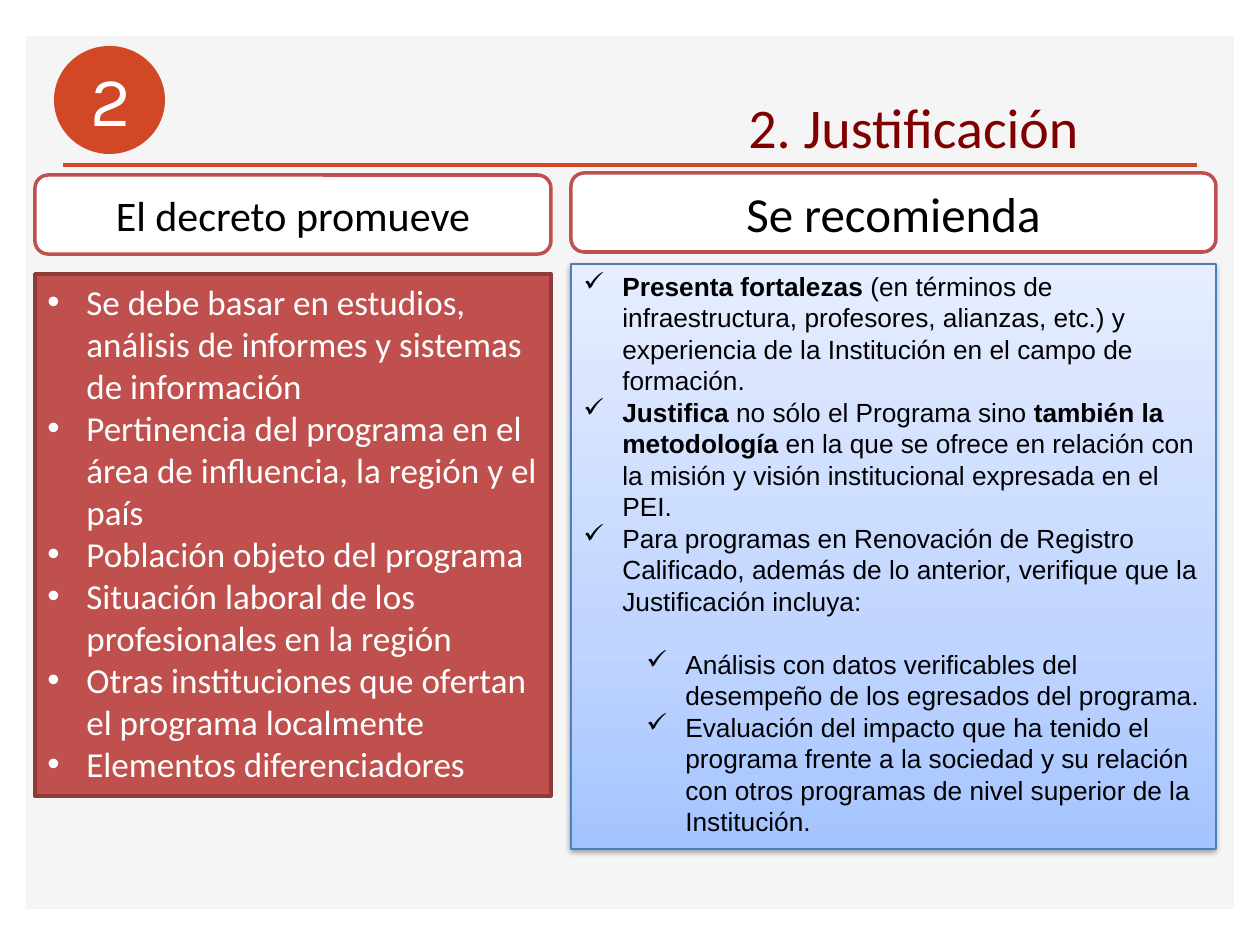
from copy import deepcopy

from lxml.etree import SubElement
from pptx import Presentation
from pptx.dml.color import RGBColor
from pptx.enum.shapes import MSO_CONNECTOR as Connector, MSO_SHAPE as Shape
from pptx.enum.text import MSO_ANCHOR as Anchor, MSO_AUTO_SIZE as AutoSize, PP_ALIGN as Align
from pptx.oxml.ns import qn
from pptx.util import Emu, Pt

SCALE = 914400 / 126  # EMU per px
INDENT = 39  # px, hanging indent of every bullet
SUB_INDENT = 102

THEME = {
    "page": "FFFFFF", "panel": "F5F5F5", "accent": "D24726", "title": "800000",
    "red": "C0504D", "red_edge": "8E3B39", "blue_edge": "4B7EBC",
    "light": "FFFFFF", "dark": "000000",
    "gradient": [(0, "A4C4FF"), (0.35, "BFD4FF"), (1, "E6EEFF")],
    "number_size": 40, "title_size": 32, "left_heading_size": 24,
    "right_heading_size": 28, "left_size": 20, "right_size": 15,
    "font": "Calibri", "number_font": "Karla", "right_font": "Arial",
}


def add_box(shapes, kind, box, fill=None, edge=None, width=2):
    shape = shapes.add_shape(kind, *(Emu(round(px * SCALE)) for px in box))
    shape.shadow.inherit = False
    if fill:
        shape.fill.solid()
        shape.fill.fore_color.rgb = RGBColor.from_string(fill)
    if edge:
        shape.line.color.rgb = RGBColor.from_string(edge)
        shape.line.width = Pt(width)
    else:
        shape.line.fill.background()
    return shape


def style_font(font, size, color, name=THEME["font"]):
    font.size, font.name = Pt(size), name
    font.color.rgb = RGBColor.from_string(color)


presentation = Presentation()
presentation.slide_width = Emu(round(1260 * SCALE))
presentation.slide_height = Emu(round(945 * SCALE))
slide = presentation.slides.add_slide(presentation.slide_layouts[6])
slide.background.fill.solid()
slide.background.fill.fore_color.rgb = RGBColor.from_string(THEME["page"])

# Background panel and title rule
add_box(slide.shapes, Shape.RECTANGLE, (26, 36, 1208, 873), THEME["panel"])
rule = slide.shapes.add_connector(
    Connector.STRAIGHT, *(Emu(round(px * SCALE)) for px in (63, 165, 1197, 165)))
rule.line.color.rgb = RGBColor.from_string(THEME["accent"])
rule.line.width = Pt(2)
SubElement(rule._element.spPr, qn("a:effectLst"))

# Number badge
badge = slide.shapes.add_group_shape()
add_box(badge.shapes, Shape.OVAL, (54, 46, 111, 108), THEME["accent"])
number = badge.shapes.add_textbox(*(Emu(round(px * SCALE)) for px in (35, 50, 151, 97)))
number.text_frame.word_wrap = True
number.text_frame.text = "2"
number.text_frame.paragraphs[0].alignment = Align.CENTER
style_font(number.text_frame.paragraphs[0].runs[0].font,
           THEME["number_size"], THEME["light"], THEME["number_font"])

# Title
title = slide.shapes.add_textbox(*(Emu(round(px * SCALE)) for px in (736, 86, 360, 81)))
title.text_frame.word_wrap = False
title.text_frame.text = "2. Justificación"
style_font(title.text_frame.paragraphs[0].runs[0].font, THEME["title_size"], THEME["title"])

# Column bodies
left_body = add_box(slide.shapes, Shape.RECTANGLE, (35, 274, 516, 522),
                    THEME["red"], THEME["red_edge"])
right_body = add_box(slide.shapes, Shape.RECTANGLE, (571, 264, 645, 585),
                     edge=THEME["blue_edge"], width=0.75)

# Vertical gradient and soft shadow of the right body
right_body.fill.gradient()
right_body.fill.gradient_angle = 90
stop_list = right_body._element.spPr.find(".//" + qn("a:gsLst"))
stop_list.insert(1, deepcopy(stop_list[0]))
for stop, (position, color) in zip(right_body.fill.gradient_stops, THEME["gradient"]):
    stop.position = position
    stop.color.rgb = RGBColor.from_string(color)
effects = right_body._element.spPr.find(qn("a:effectLst"))
shadow = SubElement(effects, qn("a:outerShdw"), blurRad=str(Pt(3.1)), dist=str(Pt(1.6)),
                    dir="5400000", rotWithShape="0")
shadow_color = SubElement(shadow, qn("a:srgbClr"), val=THEME["dark"])
SubElement(shadow_color, qn("a:alpha"), val="38000")

# Bullets: (level, runs); every second run, from the first, is bold
left_items = [(0, ["", text]) for text in (
    "Se debe basar en estudios, análisis de informes y sistemas de información",
    "Pertinencia del programa en el área de influencia, la región y el país",
    "Población objeto del programa",
    "Situación laboral de los profesionales en la región",
    "Otras instituciones que ofertan el programa localmente",
    "Elementos diferenciadores",
)]
right_items = [
    (0, ["Presenta fortalezas ",
         "(en términos de infraestructura, profesores, alianzas, etc.) y experiencia "
         "de la Institución en el campo de formación."]),
    (0, ["Justifica ", "no sólo el Programa sino ", "también la metodología ",
         "en la que se ofrece en relación con la misión y visión institucional "
         "expresada en el PEI."]),
    (0, ["", "Para programas en Renovación de Registro Calificado, además de lo anterior, "
             "verifique que la Justificación incluya:"]),
    (1, ["", "Análisis con datos verificables del desempeño de los egresados del programa."]),
    (1, ["", "Evaluación del impacto que ha tenido el programa frente a la sociedad y su "
             "relación con otros programas de nivel superior de la Institución."]),
]
for body, items, bullet, bullet_font, size, color, font_name in (
    (left_body, left_items, "•", "Arial", THEME["left_size"], THEME["light"], THEME["font"]),
    (right_body, right_items, "✓", None, THEME["right_size"], THEME["dark"],
     THEME["right_font"]),
):
    frame = body.text_frame
    frame.word_wrap = True
    frame.auto_size = AutoSize.SHAPE_TO_FIT_TEXT
    frame.vertical_anchor = Anchor.TOP
    previous_level = 0
    for index, (level, texts) in enumerate(items):
        paragraph = frame.add_paragraph() if index else frame.paragraphs[0]
        paragraph.alignment = Align.LEFT
        paragraph.level = level
        if level > previous_level:
            paragraph.space_before = Pt(18)
        previous_level = level
        properties = paragraph._p.get_or_add_pPr()
        properties.set("marL", str(round((SUB_INDENT if level else INDENT) * SCALE)))
        properties.set("indent", str(round(-INDENT * SCALE)))
        if bullet_font:
            SubElement(properties, qn("a:buFont"), typeface=bullet_font)
        SubElement(properties, qn("a:buChar"), char=bullet)
        for position, text in enumerate(texts):
            if text:
                run = paragraph.add_run()
                run.text = text
                run.font.bold = position % 2 == 0
                style_font(run.font, size, color, font_name)

# Column headings
for box, text, size in (
    ((35, 175, 516, 79), "El decreto promueve", THEME["left_heading_size"]),
    ((571, 173, 645, 79), "Se recomienda", THEME["right_heading_size"]),
):
    heading = add_box(slide.shapes, Shape.ROUNDED_RECTANGLE, box, THEME["light"], THEME["red"])
    heading.text_frame.text = text
    heading.text_frame.vertical_anchor = Anchor.MIDDLE
    heading.text_frame.paragraphs[0].alignment = Align.CENTER
    style_font(heading.text_frame.paragraphs[0].runs[0].font, size, THEME["dark"])

presentation.save("out.pptx")
